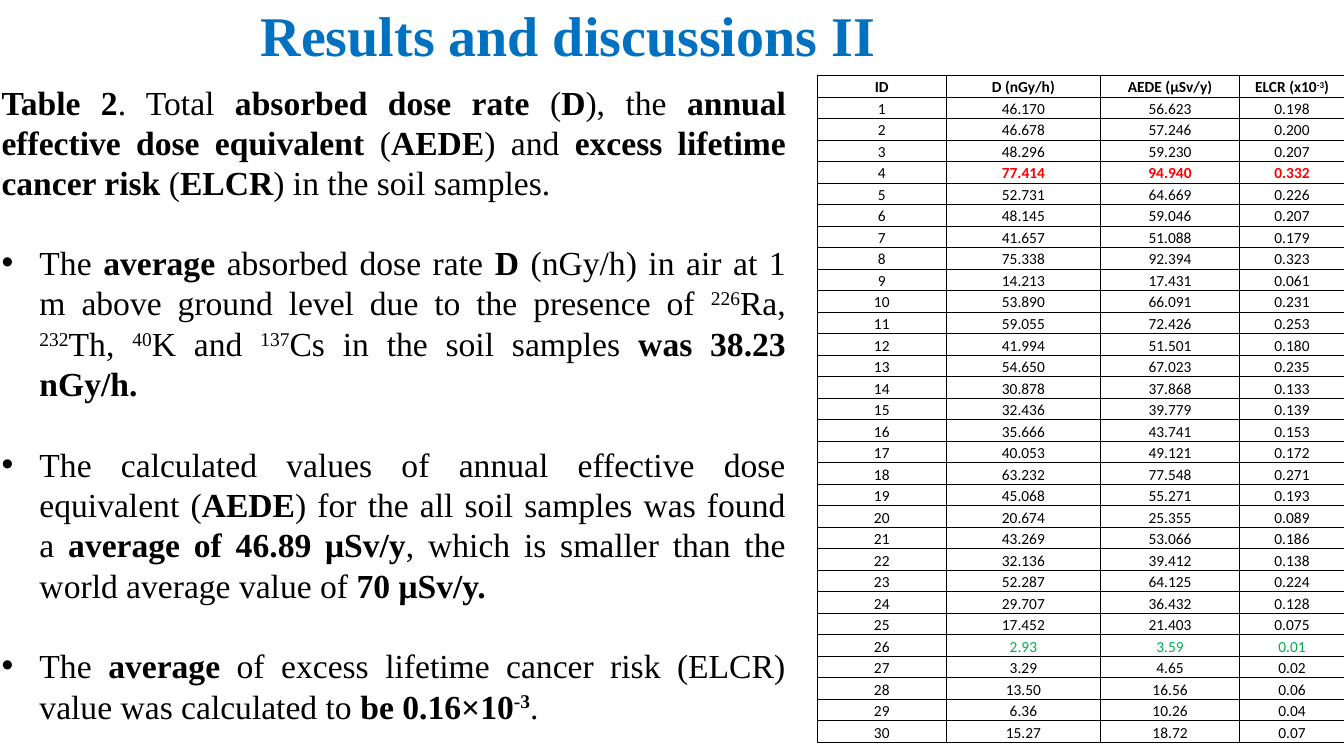
from dataclasses import dataclass

from lxml.etree import SubElement
from pptx import Presentation
from pptx.dml.color import RGBColor
from pptx.enum.text import MSO_ANCHOR as Anchor, MSO_AUTO_SIZE as AutoSize, PP_ALIGN as Align
from pptx.oxml.ns import qn
from pptx.util import Inches, Pt


@dataclass(frozen=True)
class Theme:
    """Colours, fonts and type sizes of the slide."""
    ink: str = "000000"
    title_blue: str = "0070C0"
    highest: str = "FF0000"
    lowest: str = "00B050"
    serif: str = "Times New Roman"
    sans: str = "Calibri"
    title_size: int = 40
    body_size: int = 24
    table_size: int = 11


THEME = Theme()
COLUMNS, ROWS = 160, 90
GRID_UNIT = 1 / 12
TABLE_COLUMNS = (15.36, 18.36, 16.56, 12.48)
TABLE_ROWS = 79.44

TITLE = "Results and discussions II"
CAPTION = ("*Table 2*. Total *absorbed dose rate *(*D*), the *annual effective dose equivalent *"
           "(*AEDE*) and *excess lifetime cancer risk *(*ELCR*) in the soil samples.")
FINDINGS = (
    "The *average* absorbed dose rate *D* (nGy/h) in air at 1 m above ground level due to the "
    "presence of ^226^Ra, ^232^Th, ^40^K and ^137^Cs in the soil samples *was 38.23 nGy/h.*",
    "The calculated values of annual effective dose equivalent (*AEDE*) for the all soil samples "
    "was found a *average of 46.89 μSv/y*, which is smaller than the world average value of "
    "*70 μSv/y.*",
    "The *average* of excess lifetime cancer risk (ELCR) value was calculated to "
    "*be 0.16×10^-3^*.",
)
HEADERS = ("*ID*", "*D (nGy/h)*", "*AEDE (μSv/y)*", "*ELCR (x10^-3^)*")
SAMPLES = """46.170 56.623 0.198
46.678 57.246 0.200
48.296 59.230 0.207
77.414 94.940 0.332
52.731 64.669 0.226
48.145 59.046 0.207
41.657 51.088 0.179
75.338 92.394 0.323
14.213 17.431 0.061
53.890 66.091 0.231
59.055 72.426 0.253
41.994 51.501 0.180
54.650 67.023 0.235
30.878 37.868 0.133
32.436 39.779 0.139
35.666 43.741 0.153
40.053 49.121 0.172
63.232 77.548 0.271
45.068 55.271 0.193
20.674 25.355 0.089
43.269 53.066 0.186
32.136 39.412 0.138
52.287 64.125 0.224
29.707 36.432 0.128
17.452 21.403 0.075
2.93 3.59 0.01
3.29 4.65 0.02
13.50 16.56 0.06
6.36 10.26 0.04
15.27 18.72 0.07"""
HIGHEST_ID, LOWEST_ID = 4, 26


def grid(units):
    """Turn grid units into a length."""
    return Inches(units * GRID_UNIT)


def place(shape, left, top, width, height):
    """Put a shape on the grid."""
    shape.left, shape.top, shape.width, shape.height = map(grid, (left, top, width, height))


def write(paragraph, text, *, font=THEME.serif, size=THEME.body_size, color=THEME.ink,
          align=Align.JUSTIFY, spacing=None, after=0):
    """Write text in which *stars* mark bold and ^carets^ mark superscript."""
    paragraph.alignment = align
    paragraph.line_spacing = spacing
    paragraph.space_before, paragraph.space_after = Pt(0), Pt(after)
    raised = False
    for bold_index, part in enumerate(text.split("*")):
        for piece_index, piece in enumerate(part.split("^")):
            raised = raised != (piece_index > 0)
            if not piece:
                continue
            run = paragraph.add_run()
            run.text = piece
            run.font.name, run.font.size = font, Pt(size)
            run.font.bold = bold_index % 2 == 1
            run.font.color.rgb = RGBColor.from_string(color)
            if raised:
                run.font._element.set("baseline", "30000")


def add_title(slide):
    """Fill the title, centred left of the slide's middle."""
    title = slide.shapes.title
    place(title, 0, 0, COLUMNS, 9.1)
    frame = title.text_frame
    frame.auto_size, frame.vertical_anchor = AutoSize.NONE, Anchor.MIDDLE
    frame.margin_right = grid(26)
    write(frame.paragraphs[0], f"*{TITLE}*", size=THEME.title_size, color=THEME.title_blue,
          align=Align.CENTER, spacing=0.9)


def add_caption(slide):
    """Add the table's caption."""
    caption = slide.shapes.add_textbox(*map(grid, (-1, 9.1, 95.75, 15.7)))
    caption.text_frame.word_wrap = True
    write(caption.text_frame.paragraphs[0], CAPTION)


def add_findings(slide):
    """Fill the body placeholder with the bulleted findings."""
    body = slide.placeholders[1]
    place(body, -1, 28.2, 95.75, 59.4)
    frame = body.text_frame
    frame.auto_size, frame.vertical_anchor = AutoSize.NONE, Anchor.TOP
    for index, finding in enumerate(FINDINGS):
        paragraph = frame.add_paragraph() if index else frame.paragraphs[0]
        write(paragraph, finding, after=THEME.body_size * 1.2)
        properties = paragraph._p.get_or_add_pPr()
        properties.set("marL", str(grid(4.5)))
        properties.set("indent", str(-grid(4.5)))


def format_cell(cell, text, color):
    """Write a cell with thin black borders and no fill."""
    properties = cell._tc.get_or_add_tcPr()
    for side in ("lnL", "lnR", "lnT", "lnB"):
        line = SubElement(properties, qn(f"a:{side}"), w=str(Pt(1)))
        SubElement(SubElement(line, qn("a:solidFill")), qn("a:srgbClr"), val=THEME.ink)
    cell.fill.background()
    cell.vertical_anchor = Anchor.BOTTOM
    cell.margin_left = cell.margin_right = cell.margin_top = Inches(0.01)
    cell.margin_bottom = 0
    write(cell.text_frame.paragraphs[0], text, font=THEME.sans, size=THEME.table_size,
          color=color, align=Align.CENTER, spacing=1.07)


def add_sample_table(slide):
    """Add the table of doses and risk, with its extreme samples coloured."""
    records = [HEADERS] + [(str(number), *line.split())
                           for number, line in enumerate(SAMPLES.splitlines(), 1)]
    frame = slide.shapes.add_table(len(records), len(HEADERS),
                                   *map(grid, (97.3, 9, sum(TABLE_COLUMNS), TABLE_ROWS)))
    table = frame.table
    table.first_row = table.horz_banding = False
    for column, width in zip(table.columns, TABLE_COLUMNS):
        column.width = grid(width)
    accents = {HIGHEST_ID: THEME.highest, LOWEST_ID: THEME.lowest}
    for row_index, record in enumerate(records):
        table.rows[row_index].height = grid(TABLE_ROWS / len(records))
        for column_index, value in enumerate(record):
            color = accents.get(row_index, THEME.ink) if column_index else THEME.ink
            text = f"*{value}*" if column_index and row_index == HIGHEST_ID else value
            format_cell(table.cell(row_index, column_index), text, color)


def main():
    """Build and save the slide."""
    presentation = Presentation()
    presentation.slide_width, presentation.slide_height = grid(COLUMNS), grid(ROWS)
    slide = presentation.slides.add_slide(presentation.slide_layouts[1])
    add_title(slide)
    add_caption(slide)
    add_findings(slide)
    add_sample_table(slide)
    presentation.save("out.pptx")


if __name__ == "__main__":
    main()
